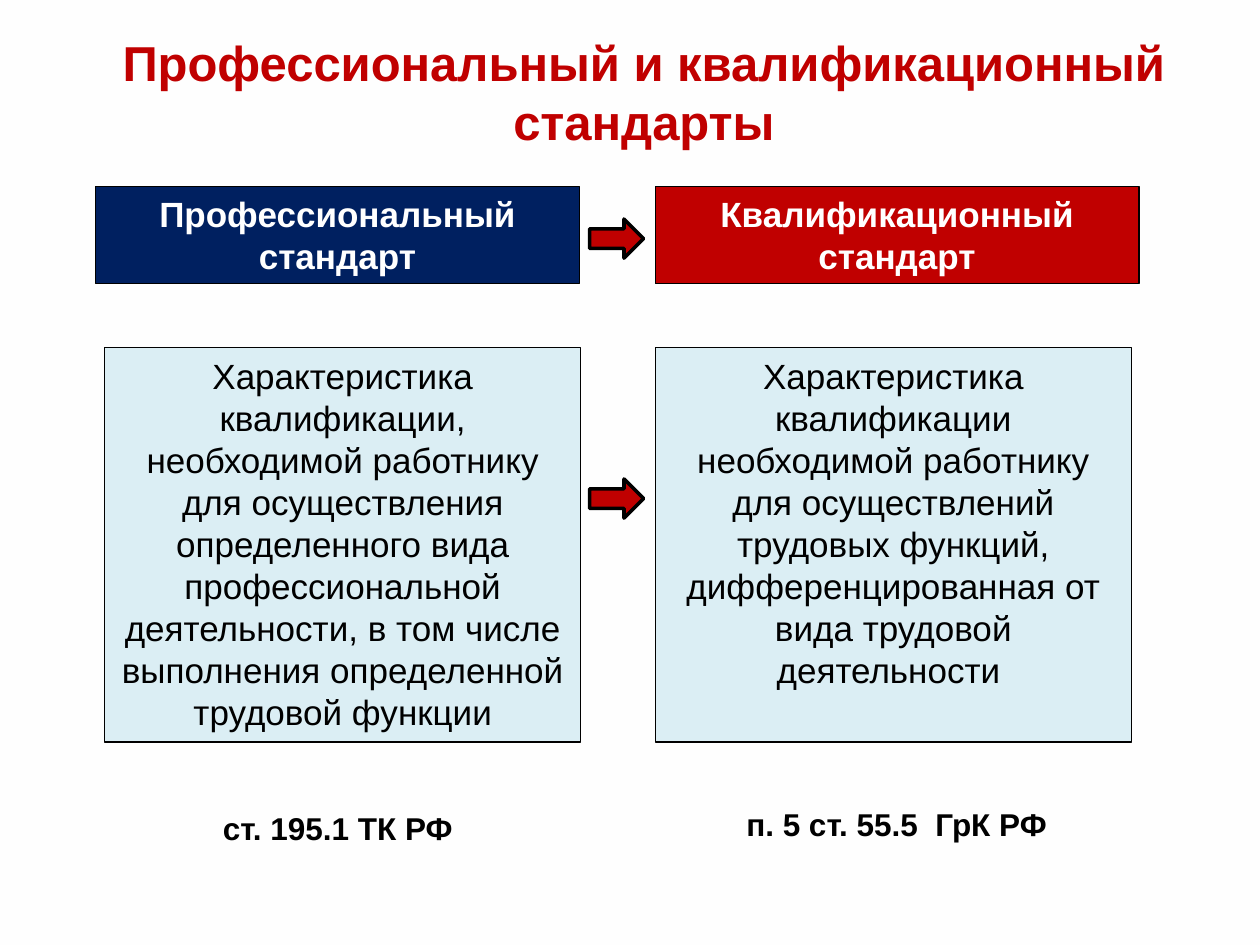
from pptx import Presentation
from pptx.dml.color import RGBColor
from pptx.enum.shapes import MSO_SHAPE
from pptx.enum.text import MSO_ANCHOR, PP_ALIGN
from pptx.util import Cm, Pt

RED = RGBColor(0xC0, 0x00, 0x00)
NAVY = RGBColor(0x00, 0x20, 0x60)
PALE_BLUE = RGBColor(0xDB, 0xEE, 0xF4)
PAPER = RGBColor(0xFE, 0xFE, 0xFE)
WHITE = RGBColor(0xFF, 0xFF, 0xFF)
BLACK = RGBColor(0x00, 0x00, 0x00)

# Boxes are left, top, width, height in centimetres
TITLE_BOX = (0.46, 0.53, 25.04, 2.64)
COLUMNS = [
    {
        "heading": ("Профессиональный стандарт", NAVY, (1.93, 3.76, 9.75, 1.96)),
        "body": ("Характеристика квалификации, необходимой работнику для "
                 "осуществления определенного вида профессиональной деятельности, "
                 "в том числе выполнения определенной трудовой функции",
                 PALE_BLUE, (2.11, 7.01, 9.6, 7.95)),
        "law": ("ст. 195.1 ТК РФ", (0.46, 16.13, 12.7, 1.02), True),
    },
    {
        "heading": ("Квалификационный стандарт", RED, (13.21, 3.76, 9.75, 1.96)),
        "body": ("Характеристика квалификации необходимой работнику для "
                 "осуществлений трудовых функций, дифференцированная от вида "
                 "трудовой деятельности ",
                 PALE_BLUE, (13.21, 7.01, 9.6, 7.95)),
        "law": ("п. 5 ст. 55.5  ГрК РФ", (14.76, 16.05, 6.63, 1.02), False),
    },
]
ARROW_CENTER_X = 12.43
ARROW_CENTERS_Y = (4.81, 10.05)
ARROW_SIZE = (0.79, 1.09)


def write_text(shape, text, size, color, bold, wrap=True):
    frame = shape.text_frame
    frame.word_wrap = wrap
    frame.vertical_anchor = MSO_ANCHOR.TOP
    frame.margin_left = frame.margin_right = Cm(0.25)
    frame.margin_top = frame.margin_bottom = Cm(0.13)
    para = frame.paragraphs[0]
    para.alignment = PP_ALIGN.CENTER
    span = para.add_run()
    span.text = text
    span.font.name = "Arial"
    span.font.size = Pt(size)
    span.font.bold = bold
    span.font.color.rgb = color
    return para


def add_filled_shape(page, kind, box, fill, line_width):
    shape = page.shapes.add_shape(kind, *map(Cm, box))
    shape.shadow.inherit = False
    shape.fill.solid()
    shape.fill.fore_color.rgb = fill
    shape.line.color.rgb = BLACK
    shape.line.width = Pt(line_width)
    return shape


def place_title(page, box):
    title = page.shapes.title
    title.left, title.top, title.width, title.height = map(Cm, box)
    write_text(title, "Профессиональный и квалификационный стандарты", 28, RED, True)


def place_column(page, heading, body, law):
    # Heading and description panels
    for (text, fill, box), color, bold in ((heading, WHITE, True), (body, BLACK, False)):
        panel = add_filled_shape(page, MSO_SHAPE.RECTANGLE, box, fill, 0.75)
        write_text(panel, text, 20, color, bold)
    # Reference to the law
    text, box, wrap = law
    label = page.shapes.add_textbox(*map(Cm, box))
    write_text(label, text, 18, BLACK, True, wrap).line_spacing = 1.07


def place_arrow(page, center_x, center_y):
    width, height = ARROW_SIZE
    box = (center_x - width / 2, center_y - height / 2, width, height)
    arrow = add_filled_shape(page, MSO_SHAPE.DOWN_ARROW, box, RED, 2)
    arrow.rotation = 270


def main():
    deck = Presentation()
    deck.slide_width, deck.slide_height = Cm(25.4), Cm(19.05)
    page = deck.slides.add_slide(deck.slide_layouts[5])
    page.background.fill.solid()
    page.background.fill.fore_color.rgb = PAPER

    place_title(page, TITLE_BOX)
    for column in COLUMNS:
        place_column(page, **column)
    # Arrows between the columns
    for center_y in ARROW_CENTERS_Y:
        place_arrow(page, ARROW_CENTER_X, center_y)
    deck.save("out.pptx")


if __name__ == "__main__":
    main()
